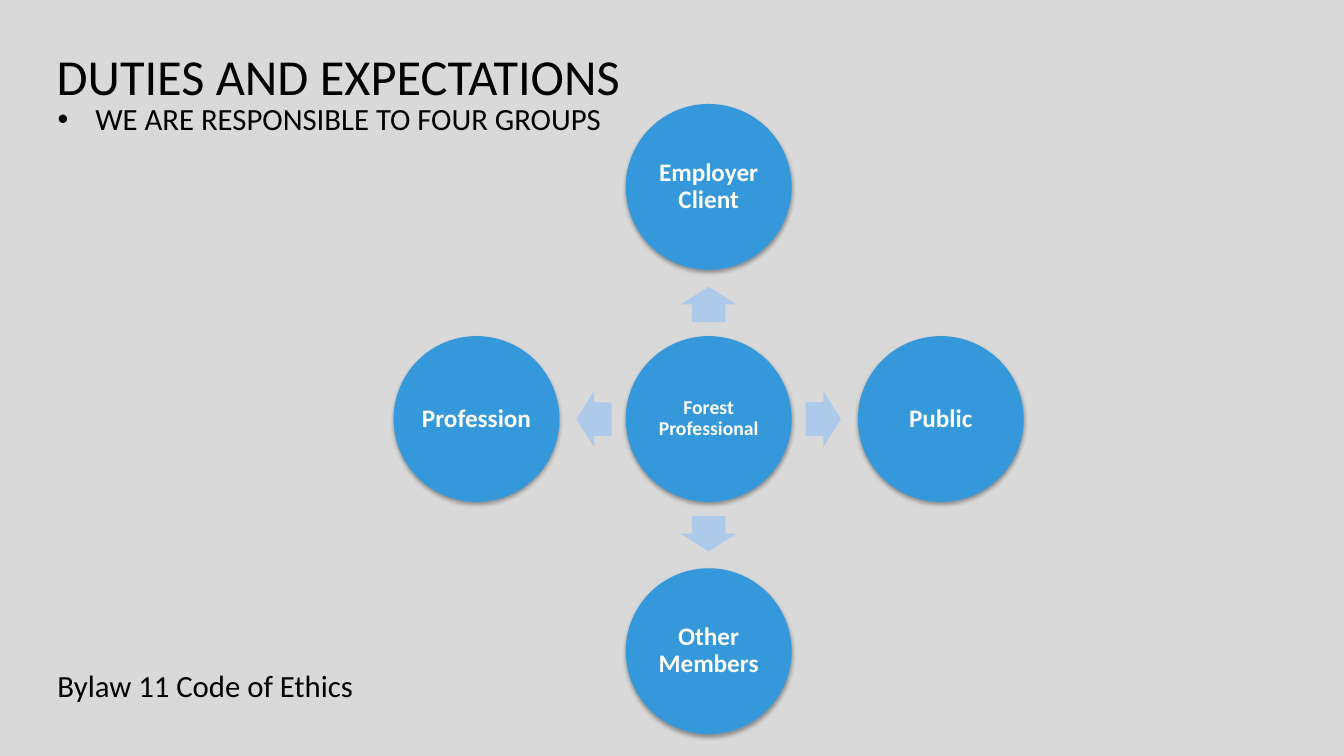
from lxml.etree import SubElement
from pptx import Presentation
from pptx.dml.color import RGBColor
from pptx.enum.shapes import MSO_SHAPE
from pptx.enum.text import MSO_ANCHOR, MSO_AUTO_SIZE, PP_ALIGN
from pptx.oxml.ns import qn
from pptx.util import Cm, Pt

FONT = "Calibri"
BLACK, WHITE = "000000", "FFFFFF"
BACKGROUND, CIRCLE_BLUE, ARROW_BLUE = "D9D9D9", "3498DB", "AECAEA"

# Diagram geometry in centimetres
CENTER_X, CENTER_Y = 17.86, 10.56
CIRCLE_SIZE = 4.18
CIRCLE_DISTANCE, ARROW_DISTANCE = 5.85, 2.89
ARROW_LENGTH, ARROW_WIDTH = 0.89, 1.41

# Label, horizontal direction, vertical direction, arrow rotation
GROUPS = [
    ("Employer Client", 0, -1, 270),
    ("Public", 1, 0, 0),
    ("Other Members", 0, 1, 90),
    ("Profession", -1, 0, 180),
]


def set_fill(fill, color):
    fill.solid()
    fill.fore_color.rgb = RGBColor.from_string(color)


def write_text(shape, text, size, color, inset=0, bold=False, line_spacing=0.9,
               align=PP_ALIGN.LEFT, anchor=MSO_ANCHOR.TOP):
    frame = shape.text_frame
    frame.text = text
    frame.word_wrap = True
    frame.auto_size = MSO_AUTO_SIZE.NONE
    frame.vertical_anchor = anchor
    frame.margin_left = frame.margin_right = Cm(inset)
    frame.margin_top = frame.margin_bottom = Cm(inset)
    paragraph = frame.paragraphs[0]
    paragraph.alignment = align
    paragraph.line_spacing = line_spacing
    paragraph.space_before = Pt(0)
    font = paragraph.runs[0].font
    font.name, font.size, font.bold = FONT, Pt(size), bold
    font.color.rgb = RGBColor.from_string(color)


def place(shape, left, top, width, height):
    shape.left, shape.top = Cm(left), Cm(top)
    shape.width, shape.height = Cm(width), Cm(height)


def remove_bullet(paragraph):
    properties = paragraph._p.get_or_add_pPr()
    properties.set("marL", "0")
    properties.set("indent", "0")
    SubElement(properties, qn("a:buNone"))


def add_soft_shadow(shape):
    shape.shadow.inherit = False
    effects = shape._element.spPr.find(qn("a:effectLst"))
    shadow = SubElement(effects, qn("a:outerShdw"), blurRad="40000",
                        dist="23000", dir="5400000", rotWithShape="0")
    color = SubElement(shadow, qn("a:srgbClr"), val=BLACK)
    SubElement(color, qn("a:alpha"), val="35000")


def add_centered_shape(slide, kind, x, y, width, height, color):
    shape = slide.shapes.add_shape(kind, Cm(x - width / 2), Cm(y - height / 2),
                                   Cm(width), Cm(height))
    set_fill(shape.fill, color)
    shape.line.fill.background()
    shape.shadow.inherit = False
    return shape


def add_circle(slide, text, x, y, size):
    circle = add_centered_shape(slide, MSO_SHAPE.OVAL, x, y,
                                CIRCLE_SIZE, CIRCLE_SIZE, CIRCLE_BLUE)
    add_soft_shadow(circle)
    write_text(circle, text, size, WHITE, inset=0.05, bold=True,
               align=PP_ALIGN.CENTER, anchor=MSO_ANCHOR.MIDDLE)


def add_arrow(slide, x, y, rotation):
    arrow = add_centered_shape(slide, MSO_SHAPE.RIGHT_ARROW, x, y,
                               ARROW_LENGTH, ARROW_WIDTH, ARROW_BLUE)
    arrow.adjustments[0], arrow.adjustments[1] = 0.6, 0.5
    arrow.rotation = rotation


def main():
    presentation = Presentation()
    presentation.slide_width, presentation.slide_height = Cm(33.87), Cm(19.05)
    slide = presentation.slides.add_slide(presentation.slide_layouts[1])
    set_fill(slide.background.fill, BACKGROUND)

    # Title and subtitle
    title, subtitle = slide.placeholders
    place(title, 1.43, 1.14, 30.94, 1.47)
    write_text(title, "DUTIES AND EXPECTATIONS", 36, BLACK, line_spacing=1.0)
    place(subtitle, 1.45, 2.62, 30.92, 1.5)
    remove_bullet(subtitle.text_frame.paragraphs[0])
    write_text(subtitle, "WE ARE RESPONSIBLE TO FOUR GROUPS", 22, BLACK)

    # Source note at the bottom
    note = slide.shapes.add_textbox(Cm(1.45), Cm(16.9), Cm(12), Cm(1))
    write_text(note, "Bylaw 11 Code of Ethics", 22, BLACK)

    # Central circle with the four groups around it
    add_circle(slide, "Forest Professional", CENTER_X, CENTER_Y, 14)
    for label, across, down, rotation in GROUPS:
        add_arrow(slide, CENTER_X + across * ARROW_DISTANCE,
                  CENTER_Y + down * ARROW_DISTANCE, rotation)
        add_circle(slide, label, CENTER_X + across * CIRCLE_DISTANCE,
                   CENTER_Y + down * CIRCLE_DISTANCE, 18)

    presentation.save("out.pptx")


if __name__ == "__main__":
    main()
